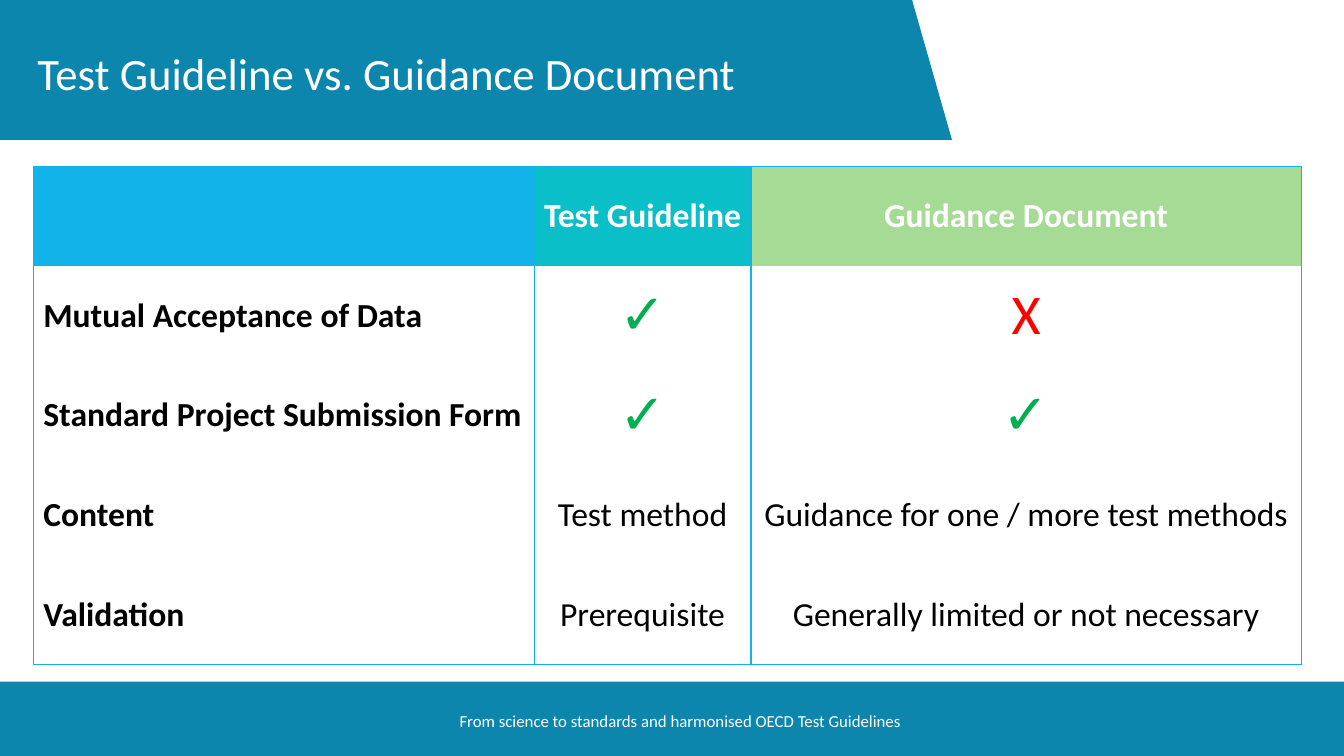
from pptx import Presentation
from pptx.dml.color import RGBColor
from pptx.enum.shapes import MSO_SHAPE
from pptx.enum.text import MSO_ANCHOR, MSO_AUTO_SIZE, PP_ALIGN
from pptx.oxml.ns import qn
from pptx.util import Pt
from lxml import etree

WIDTH, HEIGHT = 960, 540
FONT = "Calibri"
BAND, LINE, WHITE, BLACK = "0D86AE", "11B3E8", "FFFFFF", "000000"
GREEN, RED = "00B050", "FF0000"
HEADER_FILLS = [LINE, "0ABFC8", "A6DB95"]
COLUMNS = [357.84, 154.8, 393.12]
ROWS = [
    ["", "Test Guideline", "Guidance Document"],
    ["Mutual Acceptance of Data", "✓", "X"],
    ["Standard Project Submission Form", "✓", "✓"],
    ["Content", "Test method", "Guidance for one / more test methods"],
    ["Validation", "Prerequisite", "Generally limited or not necessary"],
]
MARKS = {"✓": GREEN, "X": RED}


def rgb(color):
    return RGBColor.from_string(color)


def write(tf, text, size=24, color=BLACK, bold=False, align=PP_ALIGN.LEFT, spacing=None):
    p = tf.paragraphs[0]
    p.alignment = align
    p.line_spacing = spacing
    p.font.size = Pt(size)
    if text:
        r = p.add_run()
        r.text = text
        r.font.name, r.font.size, r.font.bold = FONT, Pt(size), bold
        r.font.color.rgb = rgb(color)


def set_frame(tf):
    tf.word_wrap = True
    tf.auto_size = MSO_AUTO_SIZE.NONE
    tf.vertical_anchor = MSO_ANCHOR.MIDDLE
    tf.margin_left = tf.margin_right = Pt(3)
    tf.margin_top = tf.margin_bottom = Pt(1.5)


def paint(s, color):
    s.shadow.inherit = False
    s.fill.solid()
    s.fill.fore_color.rgb = rgb(color)
    s.line.fill.background()


def set_borders(cell, **widths):
    """Draw the sides named L, R, T or B; hide the others."""
    tcPr = cell._tc.get_or_add_tcPr()
    for side in "LRTB":
        ln = etree.SubElement(tcPr, qn(f"a:ln{side}"), w=str(Pt(widths.get(side, 0))))
        if side in widths:
            fill = etree.SubElement(ln, qn("a:solidFill"))
            etree.SubElement(fill, qn("a:srgbClr"), val=LINE)
        else:
            etree.SubElement(ln, qn("a:noFill"))


def add_header(slide, x, y, w, h):
    # Banner with a slanted right end, behind the title
    slant = 28.5
    builder = slide.shapes.build_freeform(Pt(x), Pt(y))
    builder.add_line_segments(
        [(Pt(x + w - slant), Pt(y)), (Pt(x + w), Pt(y + h)), (Pt(x), Pt(y + h))])
    banner = builder.convert_to_shape()
    paint(banner, BAND)
    title = slide.shapes.title
    title._element.addprevious(banner._element)

    # Title
    title.left, title.top = Pt(x + 23.76), Pt(y + 15)
    title.width, title.height = Pt(603.36), Pt(78.5)
    set_frame(title.text_frame)
    write(title.text_frame, "Test Guideline vs. Guidance Document",
          size=32, color=WHITE, spacing=0.9)


def add_comparison(slide, x, y, w, h):
    table = slide.shapes.add_table(
        len(ROWS), len(COLUMNS), Pt(x), Pt(y), Pt(w), Pt(h)).table
    table.horz_banding = False
    for column, width in zip(table.columns, COLUMNS):
        column.width = Pt(width)
    for i, row in enumerate(ROWS):
        table.rows[i].height = Pt(h / len(ROWS))
        for j, text in enumerate(row):
            cell = table.cell(i, j)
            cell.vertical_anchor = MSO_ANCHOR.MIDDLE
            is_header = i == 0

            # Outer frame and column rules
            sides = {"L": 1 if j else 0.5, "R": 1}
            if is_header:
                sides["T"] = 0.5
                cell.margin_left = cell.margin_right = Pt(3)
            if i == len(ROWS) - 1:
                sides["B"] = 0.5
            set_borders(cell, **sides)
            cell.fill.solid()
            cell.fill.fore_color.rgb = rgb(HEADER_FILLS[j] if is_header else WHITE)

            # Cell text
            write(cell.text_frame, text,
                  size=40 if text in MARKS else 24,
                  color=WHITE if is_header else MARKS.get(text, BLACK),
                  bold=is_header or j == 0,
                  align=PP_ALIGN.CENTER if is_header or j else PP_ALIGN.LEFT)


def add_footer(slide, x, y, w, h):
    band = slide.shapes.add_shape(MSO_SHAPE.RECTANGLE, Pt(x), Pt(y), Pt(w), Pt(h))
    paint(band, BAND)
    # Footer line
    text_w = 681
    box = slide.shapes.add_textbox(
        Pt(x + 145.5), Pt(y + 13.7), Pt(text_w), Pt(28.8))
    set_frame(box.text_frame)
    write(box.text_frame, "From science to standards and harmonised OECD Test Guidelines",
          size=12, color=WHITE, align=PP_ALIGN.CENTER)


def main():
    prs = Presentation()
    prs.slide_width, prs.slide_height = Pt(WIDTH), Pt(HEIGHT)
    slide = prs.slides.add_slide(prs.slide_layouts[5])
    add_header(slide, 0, 0, 680, 100)
    add_comparison(slide, 23.76, 118.8, sum(COLUMNS), 356)
    add_footer(slide, 0, 486.9, WIDTH, 53.1)
    prs.save("out.pptx")


if __name__ == "__main__":
    main()
